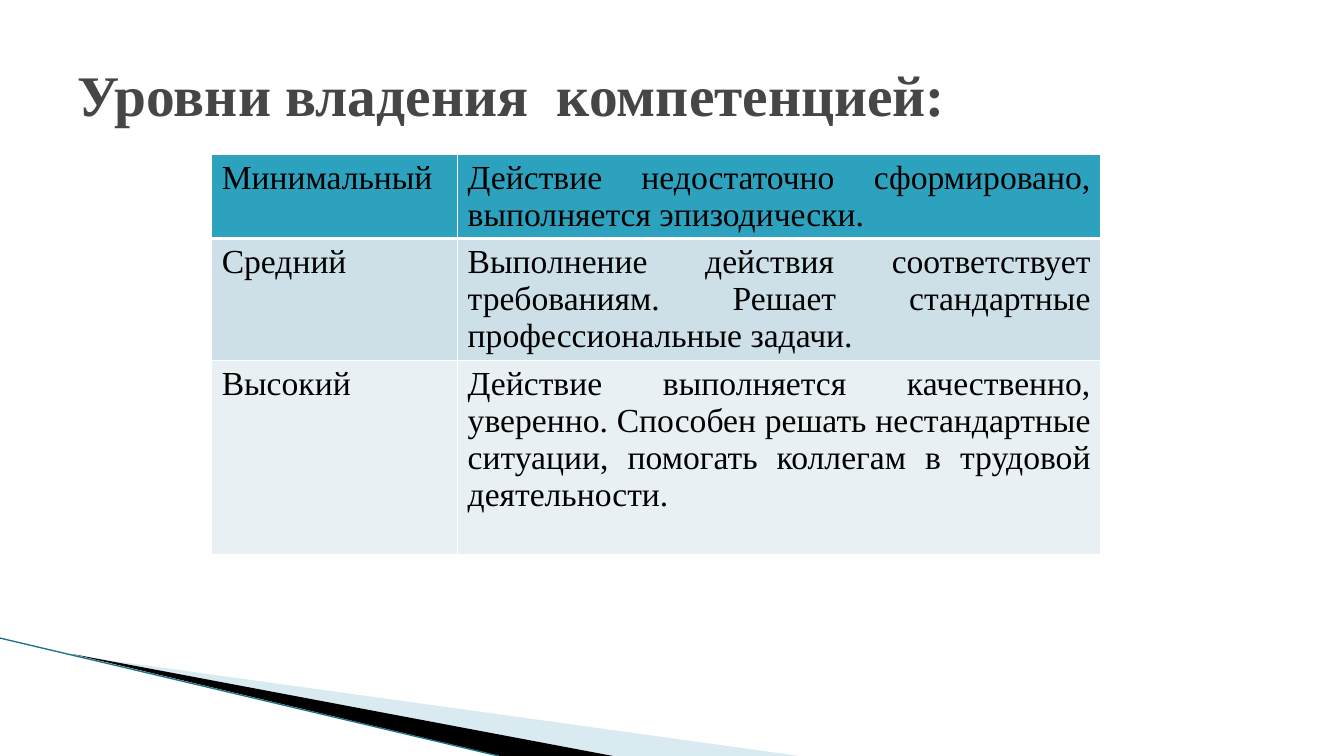
"""Build a slide with a table of competency levels."""
from lxml.etree import SubElement
from pptx import Presentation
from pptx.dml.color import RGBColor
from pptx.enum.shapes import MSO_CONNECTOR as Connector
from pptx.enum.text import MSO_ANCHOR as Anchor, PP_ALIGN as Align
from pptx.oxml.ns import qn
from pptx.util import Inches, Pt

WIDTH, HEIGHT = Inches(13.33), Inches(7.5)
FONT = "Times New Roman"
LEVELS = [
    ("Минимальный", "Действие недостаточно сформировано, выполняется эпизодически."),
    ("Средний", "Выполнение действия соответствует требованиям. "
                "Решает стандартные профессиональные задачи."),
    ("Высокий", "Действие выполняется качественно, уверенно. Способен решать "
                "нестандартные ситуации, помогать коллегам в трудовой деятельности."),
]
ROW_FILLS = ["2DA2BF", "CDE0E8", "E8F0F4"]
ROW_HEIGHTS = [11.07, 16.13, 25.73]
COLUMN_WIDTHS = [18.3, 47.85]


def across(columns):
    """Return a length in hundredths of the slide width."""
    return int(WIDTH * columns / 100)


def down(rows):
    """Return a length in hundredths of the slide height."""
    return int(HEIGHT * rows / 100)


def color(value):
    """Return a colour from a hex string."""
    return RGBColor.from_string(value)


def write_text(frame, text, size, fill="000000", bold=False, align=Align.LEFT, anchor=Anchor.TOP):
    """Write one formatted paragraph into a text frame."""
    frame.word_wrap = True
    frame.vertical_anchor = anchor
    paragraph = frame.paragraphs[0]
    paragraph.alignment = align
    run = paragraph.add_run()
    run.text = text
    run.font.name, run.font.size, run.font.bold = FONT, Pt(size), bold
    run.font.color.rgb = color(fill)


def add_wedge(slide, points, fill, opacity=100):
    """Draw a filled outline through grid points."""
    start, *rest = [(across(x), down(y)) for x, y in points]
    builder = slide.shapes.build_freeform(*start)
    builder.add_line_segments(rest, close=True)
    shape = builder.convert_to_shape()
    shape.shadow.inherit = False
    shape.fill.solid()
    shape.fill.fore_color.rgb = color(fill)
    shape.line.fill.background()
    if opacity < 100:
        tint = shape.fill._xPr.find(".//" + qn("a:srgbClr"))
        SubElement(tint, qn("a:alpha"), val=str(opacity * 1000))


def add_line(slide, start, end, fill, width):
    """Draw a straight line between grid points."""
    line = slide.shapes.add_connector(
        Connector.STRAIGHT, across(start[0]), down(start[1]), across(end[0]), down(end[1]))
    line.line.color.rgb = color(fill)
    line.line.width = Pt(width)
    SubElement(line._element.spPr, qn("a:effectLst"))


def set_borders(cell, fill, bottom=1):
    """Give a cell solid borders, with its own bottom width."""
    properties = cell._tc.get_or_add_tcPr()
    for side, width in zip("LRTB", (1, 1, 1, bottom)):
        border = SubElement(properties, qn(f"a:ln{side}"), w=str(Pt(width)))
        SubElement(SubElement(border, qn("a:solidFill")), qn("a:srgbClr"), val=fill)


def add_title(slide, text):
    """Place and format the title placeholder."""
    title = slide.shapes.title
    title.left, title.top = across(5), down(4)
    title.width, title.height = across(90), down(16.67)
    write_text(title.text_frame, text, 41, fill="464646", bold=True, anchor=Anchor.MIDDLE)


def add_levels_table(slide):
    """Add the table of levels and their descriptions."""
    table = slide.shapes.add_table(
        len(LEVELS), len(COLUMN_WIDTHS), across(15.75), down(20.4),
        across(sum(COLUMN_WIDTHS)), down(sum(ROW_HEIGHTS))).table
    for column, width in zip(table.columns, COLUMN_WIDTHS):
        column.width = across(width)
    for index, (row, texts) in enumerate(zip(table.rows, LEVELS)):
        row.height = down(ROW_HEIGHTS[index])
        for cell, text in zip(row.cells, texts):
            set_borders(cell, "FFFFFF", bottom=3 if index == 0 else 1)
            cell.fill.solid()
            cell.fill.fore_color.rgb = color(ROW_FILLS[index])
            write_text(cell.text_frame, text, 24, align=Align.JUSTIFY)


def main():
    """Build and save the slide."""
    presentation = Presentation()
    presentation.slide_width, presentation.slide_height = WIDTH, HEIGHT
    slide = presentation.slides.add_slide(presentation.slide_layouts[5])
    add_wedge(slide, [(5.48, 86.7), (59.48, 100), (45.6, 100)], "A0CBDC", opacity=40)
    add_wedge(slide, [(5.33, 86.5), (45.6, 100), (37.2, 100)], "000000")
    add_line(slide, (0, 84.4), (37.1, 100), "1B7587", 0.95)
    add_title(slide, "Уровни владения  компетенцией:")
    add_levels_table(slide)
    presentation.save("out.pptx")


if __name__ == "__main__":
    main()
